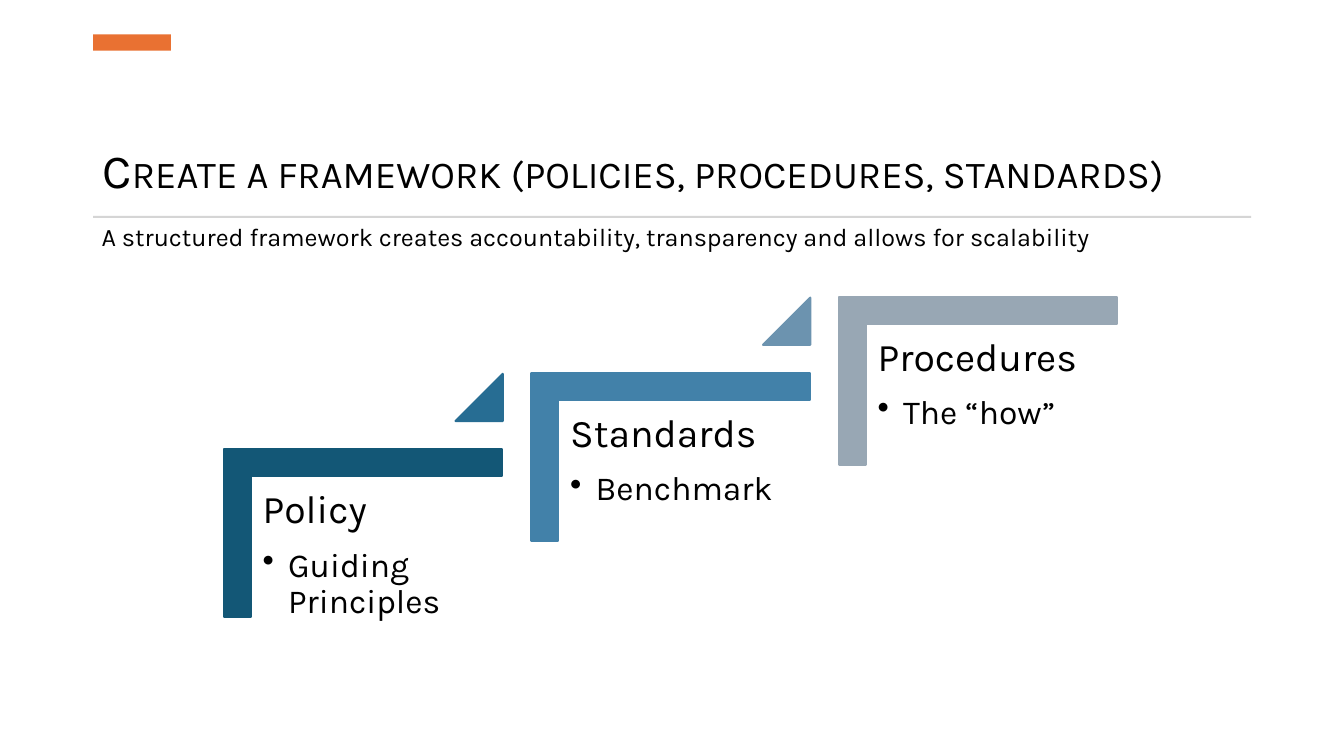
from dataclasses import dataclass

import lxml.etree
import pptx
import pptx.dml.color
import pptx.enum.shapes
import pptx.enum.text
import pptx.oxml.ns
import pptx.presentation
import pptx.shapes.autoshape
import pptx.slide
import pptx.text.text
import pptx.util
from pptx.util import Cm

Shape = pptx.enum.shapes.MSO_SHAPE


@dataclass(frozen=True)
class Theme:
    font: str = "Karla"
    text: str = "000000"
    accent: str = "E97132"
    rule: str = "D5D5D5"
    title_size: float = 34
    subtitle_size: float = 18
    heading_size: float = 28
    detail_size: float = 24
    outline: float = 1.5


@dataclass(frozen=True)
class Box:
    left: float
    top: float
    width: float
    height: float

    def shifted(self, right: float, up: float) -> "Box":
        return Box(self.left + right, self.top - up, self.width, self.height)

    def lengths(self) -> tuple[Cm, Cm, Cm, Cm]:
        return Cm(self.left), Cm(self.top), Cm(self.width), Cm(self.height)


@dataclass(frozen=True)
class Step:
    heading: str
    detail: str
    color: str
    riser_color: str | None = None


THEME = Theme()
STEPS = [
    Step("Policy", "Guiding Principles", "135776", "276D93"),
    Step("Standards", "Benchmark", "4281A9", "6C93AF"),
    Step("Procedures", "The “how”", "98A7B4"),
]
STEP_RUN = 7.75
STEP_RISE = 1.92
CORNER = Box(7.04, 9.93, 4.22, 7.01)
STEP_TEXT = Box(6.32, 12.04, 6.35, 5.56)
RISER = Box(11.48, 9.42, 1.19, 1.19)
CORNER_SHAPE = Shape.from_xml("corner")
CORNER_THICKNESS = 0.16


def add_filled(
    slide: pptx.slide.Slide, kind: Shape, box: Box, color: str, outlined: bool = False
) -> pptx.shapes.autoshape.Shape:
    shape = slide.shapes.add_shape(kind, *box.lengths())
    shape.shadow.inherit = False
    rgb = pptx.dml.color.RGBColor.from_string(color)
    shape.fill.solid()
    shape.fill.fore_color.rgb = rgb
    if outlined:
        shape.line.color.rgb = rgb
        shape.line.width = pptx.util.Pt(THEME.outline)
    else:
        shape.line.fill.background()
    return shape


def add_text(slide: pptx.slide.Slide, box: Box, text: str) -> pptx.text.text.TextFrame:
    frame = slide.shapes.add_textbox(*box.lengths()).text_frame
    frame.word_wrap = True
    frame.text = text
    return frame


def format_paragraph(paragraph: pptx.text.text._Paragraph, size: float) -> None:
    for run in paragraph.runs:
        run.font.name = THEME.font
        run.font.size = pptx.util.Pt(size)
        run.font.color.rgb = pptx.dml.color.RGBColor.from_string(THEME.text)


def add_bullet(paragraph: pptx.text.text._Paragraph) -> None:
    properties = paragraph._p.get_or_add_pPr()
    properties.set("marL", str(Cm(0.64)))
    properties.set("indent", str(-Cm(0.64)))
    bullet = lxml.etree.SubElement(properties, pptx.oxml.ns.qn("a:buChar"))
    bullet.set("char", "•")


def add_header(slide: pptx.slide.Slide) -> None:
    title = add_text(
        slide,
        Box(2.34, 1.9, 29.18, 3.23),
        "Create a framework (policies, procedures, standards)",
    )
    title.vertical_anchor = pptx.enum.text.MSO_ANCHOR.BOTTOM
    title.paragraphs[0].line_spacing = 0.9
    format_paragraph(title.paragraphs[0], THEME.title_size)
    title.paragraphs[0].runs[0]._r.get_or_add_rPr().set("cap", "small")

    add_filled(slide, Shape.RECTANGLE, Box(2.35, 0.87, 1.96, 0.41), THEME.accent)
    add_filled(slide, Shape.RECTANGLE, Box(2.35, 5.44, 29.18, 0.05), THEME.rule)

    subtitle = add_text(
        slide,
        Box(2.31, 5.46, 29.21, 1.02),
        "A structured framework creates accountability, "
        "transparency and allows for scalability",
    )
    format_paragraph(subtitle.paragraphs[0], THEME.subtitle_size)


def add_step(slide: pptx.slide.Slide, step: Step, index: int) -> None:
    right, up = index * STEP_RUN, index * STEP_RISE

    corner = add_filled(
        slide, CORNER_SHAPE, CORNER.shifted(right, up), step.color, outlined=True
    )
    corner.rotation = 90
    corner.adjustments[0] = CORNER_THICKNESS
    corner.adjustments[1] = CORNER_THICKNESS

    frame = add_text(
        slide, STEP_TEXT.shifted(right, up), f"{step.heading}\n{step.detail}"
    )
    frame.margin_left = frame.margin_right = Cm(0.3)
    frame.margin_top = frame.margin_bottom = Cm(0.3)
    heading, detail = frame.paragraphs
    for paragraph, size, space_after in (
        (heading, THEME.heading_size, 11.5),
        (detail, THEME.detail_size, 4),
    ):
        paragraph.line_spacing = 0.9
        paragraph.space_after = pptx.util.Pt(space_after)
        format_paragraph(paragraph, size)
    detail.level = 1
    add_bullet(detail)

    if step.riser_color:
        riser = add_filled(
            slide,
            Shape.ISOSCELES_TRIANGLE,
            RISER.shifted(right, up),
            step.riser_color,
            outlined=True,
        )
        riser.adjustments[0] = 1


def main() -> None:
    presentation = pptx.Presentation()
    presentation.slide_width = Cm(33.87)
    presentation.slide_height = Cm(19.05)
    slide = presentation.slides.add_slide(presentation.slide_layouts[6])
    add_header(slide)
    for index, step in enumerate(STEPS):
        add_step(slide, step, index)
    presentation.save("out.pptx")


if __name__ == "__main__":
    main()
